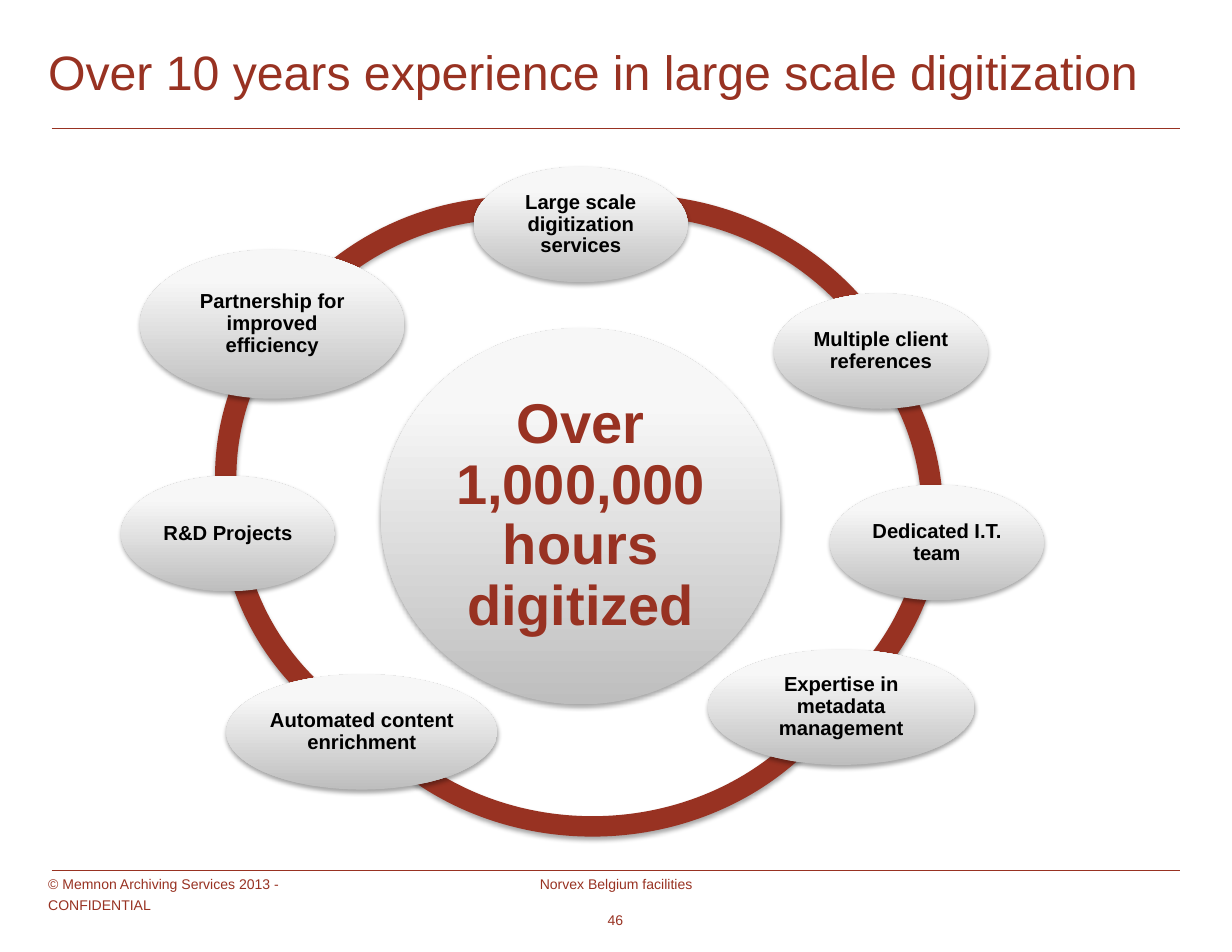
from dataclasses import dataclass

from lxml import etree
from pptx import Presentation
from pptx.dml.color import RGBColor
from pptx.enum.shapes import MSO_CONNECTOR, MSO_SHAPE
from pptx.enum.text import MSO_ANCHOR, MSO_AUTO_SIZE, PP_ALIGN
from pptx.oxml import parse_xml
from pptx.oxml.ns import nsdecls, qn
from pptx.util import Inches, Pt

LINE = MSO_CONNECTOR.STRAIGHT
ARC, OVAL = MSO_SHAPE.BLOCK_ARC, MSO_SHAPE.OVAL
TOP, MIDDLE = MSO_ANCHOR.TOP, MSO_ANCHOR.MIDDLE
LEFT, CENTER = PP_ALIGN.LEFT, PP_ALIGN.CENTER
GROW, FIXED = MSO_AUTO_SIZE.SHAPE_TO_FIT_TEXT, MSO_AUTO_SIZE.NONE


@dataclass(frozen=True)
class Theme:
    """Colours, font and type sizes of the deck."""
    red: str = "983222"
    ink: str = "000000"
    grays: tuple = ((0, "BEBEBE"), (80, "F7F7F7"), (100, "F8F8F8"))
    font: str = "Arial"
    title: int = 31
    hub: int = 36
    label: int = 13
    foot: int = 9


THEME = Theme()


def write(frame, text, size, color=THEME.red, bold=False, align=LEFT,
          anchor=TOP, pad=(0, 0), space=1.0, fit=FIXED):
    """Fill a text frame with one formatted paragraph."""
    frame.word_wrap, frame.auto_size = True, fit
    frame.vertical_anchor = anchor
    frame.margin_left = frame.margin_right = Inches(pad[0])
    frame.margin_top = frame.margin_bottom = Inches(pad[1])
    para = frame.paragraphs[0]
    para.alignment, para.line_spacing = align, space
    run = para.add_run()
    run.text = text
    run.font.name, run.font.size, run.font.bold = THEME.font, Pt(size), bold
    run.font.color.rgb = RGBColor.from_string(color)


class Page:
    """Holds the theme and the current slide."""

    def __init__(self, deck, theme):
        """Add a title-only slide."""
        self.theme = theme
        self.slide = deck.slides.add_slide(deck.slide_layouts[5])
        self.shapes = self.slide.shapes

    def title(self, text, *box):
        """Place and fill the title."""
        head = self.shapes.title
        head.left, head.top, head.width, head.height = map(Inches, box)
        write(head.text_frame, text, self.theme.title, anchor=MIDDLE,
              space=0.85, fit=GROW)

    def rule(self, left, right, top):
        """Draw a thin level line."""
        line = self.shapes.add_connector(
            LINE, Inches(left), Inches(top), Inches(right), Inches(top))
        line.line.color.rgb = RGBColor.from_string(self.theme.red)
        line.line.width = Pt(0.75)
        etree.SubElement(line._element.spPr, qn("a:effectLst"))

    def note(self, text, *box, **style):
        """Add a small footer text."""
        frame = self.shapes.add_textbox(*map(Inches, box)).text_frame
        write(frame, text, self.theme.foot, **style)

    def shade(self, shape):
        """Drop the outline and cast a soft shadow."""
        shape.line.fill.background()
        shape.shadow.inherit = False
        shape._element.spPr.find(qn("a:effectLst")).append(parse_xml(
            f'<a:outerShdw {nsdecls("a")} blurRad="{Pt(3.1)}" '
            f'dist="{Pt(1.8)}" dir="5400000" rotWithShape="0">'
            f'<a:srgbClr val="{self.theme.ink}"><a:alpha val="35000"/>'
            '</a:srgbClr></a:outerShdw>'))

    def arc(self, left, top, height, start, end, turn=0):
        """Draw one piece of the ring, with angles in degrees."""
        arc = self.shapes.add_shape(
            ARC, Inches(left), Inches(top), Inches(5.2), Inches(height))
        arc.adjustments[0] = start * 0.6
        arc.adjustments[1] = end * 0.6
        arc.adjustments[2] = 0.039
        arc.rotation = turn
        arc.fill.solid()
        arc.fill.fore_color.rgb = RGBColor.from_string(self.theme.red)
        self.shade(arc)

    def oval(self, text, *box, **style):
        """Draw a gray oval with a bold label."""
        oval = self.shapes.add_shape(OVAL, *map(Inches, box))
        stops = "".join(
            f'<a:gs pos="{at * 1000}"><a:srgbClr val="{tone}"/></a:gs>'
            for at, tone in self.theme.grays)
        oval.fill.background()
        props = oval._element.spPr
        props.replace(props.find(qn("a:noFill")), parse_xml(
            f'<a:gradFill {nsdecls("a")} rotWithShape="1"><a:gsLst>{stops}'
            '</a:gsLst><a:lin ang="16200000" scaled="0"/></a:gradFill>'))
        self.shade(oval)
        write(oval.text_frame, text, bold=True, align=CENTER, anchor=MIDDLE,
              space=0.9, **style)


ARCS = (
    (1.97, 1.76, 5.13, 218.58, 287.4, 342),
    (3.13, 1.75, 4.9, 257.69, 326.92, 16),
    (1.92, 1.81, 4.9, 167.92, 214.73),
    (1.96, 2.05, 4.9, 121.56, 173.55),
    (2.69, 2.8, 4.67, 29.64, 144.02),
    (3.23, 2.06, 4.9, 8.04, 48.86),
    (3.22, 2.13, 4.9, 323.18, 6.48),
)
TOPICS = (
    ("Large scale digitization services", 4.23, 1.49, 1.91, 1.03),
    ("Multiple client references", 6.91, 2.62, 1.91, 1.03),
    ("Dedicated I.T. team", 7.41, 4.33, 1.91, 1.03),
    ("Expertise in metadata management", 6.32, 5.8, 2.38, 1.03),
    ("Automated content enrichment", 2.02, 6.02, 2.42, 1.03),
    ("R&D Projects", 1.08, 4.25, 1.91, 1.03),
    ("Partnership for improved efficiency", 1.25, 2.23, 2.36, 1.33),
)


def main():
    """Build the slide and save it."""
    deck = Presentation()
    deck.slide_width, deck.slide_height = Inches(11), Inches(8.5)
    page = Page(deck, THEME)
    for top in (1.15, 7.77):
        page.rule(0.46, 10.54, top)
    page.note("© Memnon Archiving Services 2013 - CONFIDENTIAL",
              0.43, 7.79, 2.99, 0.21, space=Pt(13))
    page.note("Norvex Belgium facilities", 4.04, 7.79, 2.92, 0.53,
              align=CENTER, space=Pt(13))
    page.note("46", 5.15, 8.09, 0.69, 0.41, align=CENTER,
              pad=(0.11, 0.06), space=0.95)
    page.title("Over 10 years experience in large scale digitization",
               0.43, 0.45, 10.09, 0.45)
    for arc in ARCS:
        page.arc(*arc)
    page.oval("Over 1,000,000 hours digitized", 3.4, 2.93, 3.57, 3.36,
              size=THEME.hub, pad=(0.05, 0.05))
    for topic in TOPICS:
        page.oval(*topic, size=THEME.label, color=THEME.ink,
                  pad=(0.02, 0.02))
    deck.save("out.pptx")


if __name__ == "__main__":
    main()
